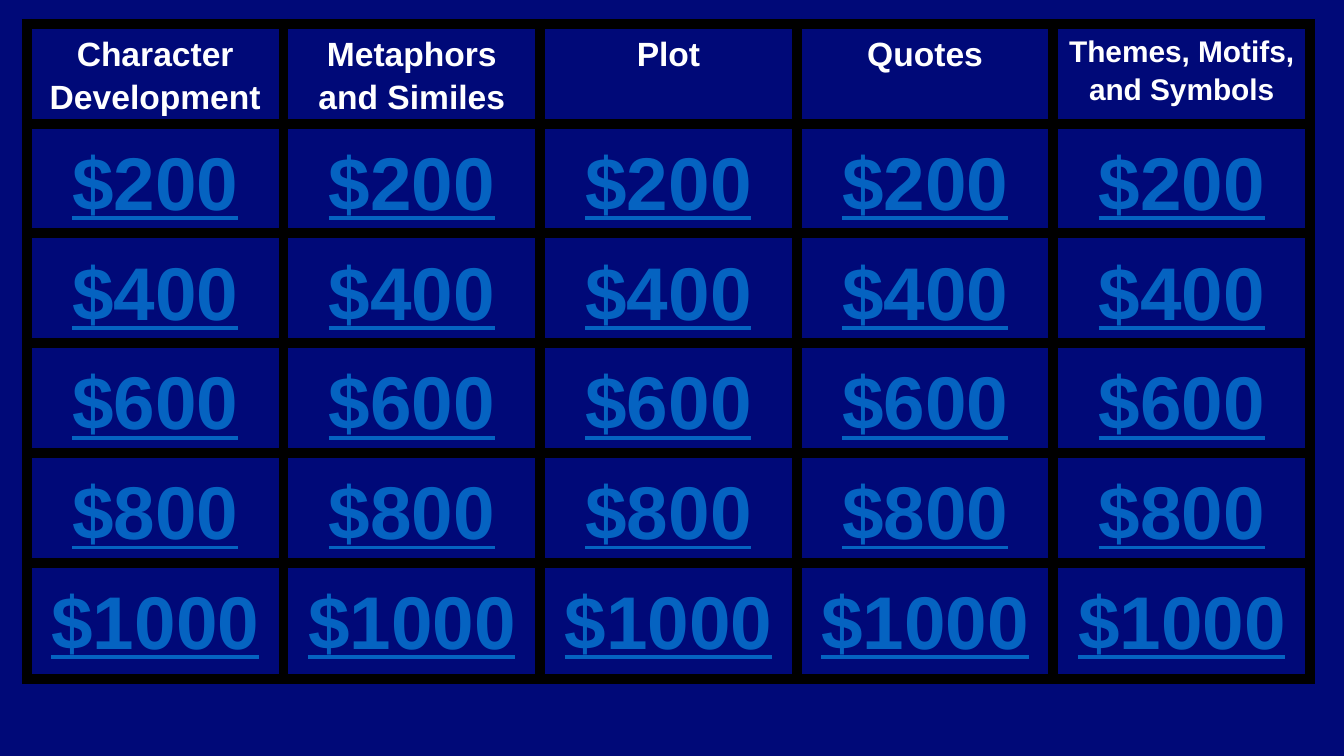
from lxml import etree
from pptx import Presentation
from pptx.dml.color import RGBColor
from pptx.enum import text
from pptx.oxml import ns
from pptx.util import Pt

COLORS = {"page": "000978", "grid": "000000", "heading": "FFFFFF", "amount": "0563C1"}
CATEGORIES = [
    ("Character Development", 18),
    ("Metaphors and Similes", 18),
    ("Plot", 18),
    ("Quotes", 18),
    ("Themes, Motifs, and Symbols", 16),
]
AMOUNTS = ["$200", "$400", "$600", "$800", "$1000"]
ROW_HEIGHTS = [47.5, 58.8, 58.8, 58.8, 58.8, 62.4]
BORDER_WIDTH = 6


def color(name):
    return RGBColor.from_string(COLORS[name])


def write(cell, words, *, size, shade, underline=None):
    para = cell.text_frame.paragraphs[0]
    para.alignment = text.PP_ALIGN.CENTER
    para.line_spacing = 1.15
    span = para.add_run()
    span.text = words
    span.font.name = "Arial"
    span.font.size = Pt(size)
    span.font.bold = True
    span.font.underline = underline
    span.font.color.rgb = color(shade)


def add_borders(cell):
    properties = cell._tc.get_or_add_tcPr()
    for side in ("lnL", "lnR", "lnT", "lnB"):
        line = etree.SubElement(properties, ns.qn(f"a:{side}"), w=str(Pt(BORDER_WIDTH)))
        fill = etree.SubElement(line, ns.qn("a:solidFill"))
        etree.SubElement(fill, ns.qn("a:srgbClr"), val=COLORS["grid"])


def add_board(page, left, top, width):
    """Place the quiz grid: a row of categories above the rows of amounts."""
    frame = page.shapes.add_table(
        len(ROW_HEIGHTS), len(CATEGORIES),
        Pt(left), Pt(top), Pt(width), Pt(sum(ROW_HEIGHTS)),
    )
    board = frame.table
    board.first_row = board.horz_banding = False
    for column in board.columns:
        column.width = Pt(width / len(CATEGORIES))
    for row, height in zip(board.rows, ROW_HEIGHTS):
        row.height = Pt(height)

    for cell in board.iter_cells():
        add_borders(cell)
        cell.fill.background()
    for column, (category, size) in enumerate(CATEGORIES):
        write(board.cell(0, column), category, size=size, shade="heading")
        for row, amount in enumerate(AMOUNTS, start=1):
            write(board.cell(row, column), amount, size=40, shade="amount", underline=True)


def main():
    deck = Presentation()
    deck.slide_width, deck.slide_height = Pt(720), Pt(405)
    page = deck.slides.add_slide(deck.slide_layouts[6])
    page.background.fill.solid()
    page.background.fill.fore_color.rgb = color("page")
    add_board(page, left=14.4, top=12.7, width=687.5)
    deck.save("out.pptx")


if __name__ == "__main__":
    main()
